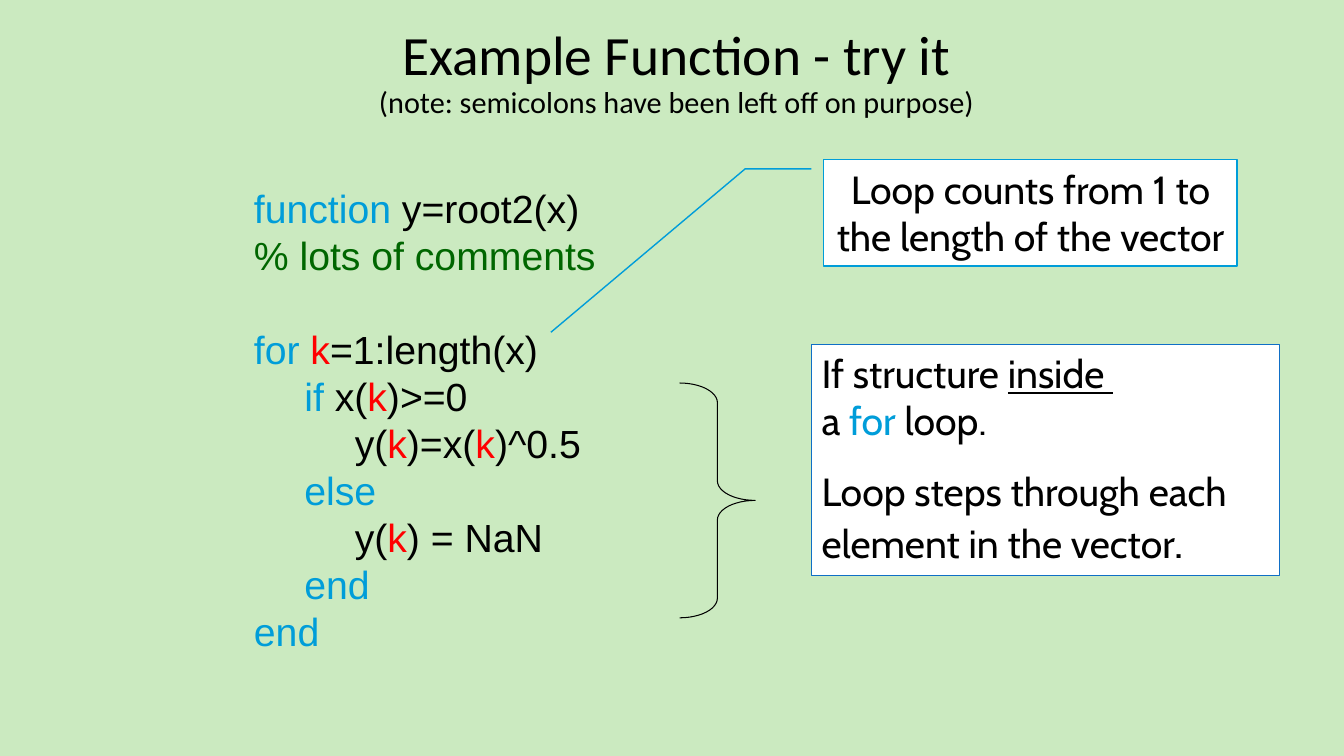
from dataclasses import dataclass

from pptx import Presentation
from pptx.dml.color import RGBColor
from pptx.enum.shapes import MSO_SHAPE
from pptx.enum.text import MSO_ANCHOR, MSO_AUTO_SIZE, PP_ALIGN
from pptx.util import Inches, Pt

RECT = MSO_SHAPE.RECTANGLE
BRACE = MSO_SHAPE.RIGHT_BRACE
CALLOUT = MSO_SHAPE.LINE_CALLOUT_2
TOP, MIDDLE = MSO_ANCHOR.TOP, MSO_ANCHOR.MIDDLE
LEFT, CENTER = PP_ALIGN.LEFT, PP_ALIGN.CENTER
NO_AUTOFIT = MSO_AUTO_SIZE.NONE
TITLE_ONLY = 5


@dataclass(frozen=True)
class Theme:
    background: str = "CBEAC0"
    text: str = "000000"
    keyword: str = "009DD9"
    comment: str = "006600"
    variable: str = "FF0000"
    panel: str = "FFFFFF"
    panel_line: str = "0F6FC6"
    title_font: str = "Calibri"
    code_font: str = "Arial"
    note_font: str = "Cabin"
    title_size: float = 39.6
    subtitle_size: float = 21.6
    body_size: float = 28
    stop_size: float = 32
    code_pitch: float = 33.6
    note_gap: float = 16.5


THEME = Theme()
KEY = {"color": THEME.keyword}
VAR = {"color": THEME.variable}
COMMENT = {"color": THEME.comment}

# Each code line: blank lines above it, then its coloured pieces.
CODE = [
    (0, [("function", KEY), (" y=root2(x)", {})]),
    (0, [("% lots of comments", COMMENT)]),
    (1, [("for ", KEY), ("k", VAR), ("=1:length(x)", {})]),
    (0, [("\tif", KEY), (" x(", {}), ("k", VAR), (")>=0", {})]),
    (0, [("\t\ty(", {}), ("k", VAR), (")=x(", {}), ("k", VAR), (")^0.5", {})]),
    (0, [("\telse", KEY)]),
    (0, [("\t\ty(", {}), ("k", VAR), (") = NaN", {})]),
    (0, [("\tend", KEY)]),
    (0, [("end", KEY)]),
]
STRUCTURE_NOTE = [
    [("If structure ", {}), ("inside ", {"underline": True}), ("\n", {}),
     ("a ", {}), ("for ", KEY), ("loop.", {})],
    [("Loop steps through each element in the vector", {}),
     (".", {"size": THEME.stop_size})],
]
COUNT_NOTE = [[("Loop counts from 1 to the length of the vector", {})]]


def rgb(value):
    return RGBColor.from_string(value)


def add_runs(p, pieces, font):
    """Fill a paragraph with (text, format) pieces; a newline piece is a line break."""
    for text, changes in pieces:
        if text == "\n":
            p.add_line_break()
            continue
        r = p.add_run()
        r.text = text
        style = {"name": font, "size": THEME.body_size, "color": THEME.text} | changes
        r.font.color.rgb = rgb(style.pop("color"))
        style["size"] = Pt(style["size"])
        for name, value in style.items():
            setattr(r.font, name, value)


def next_paragraph(tf, index):
    return tf.add_paragraph() if index else tf.paragraphs[0]


def place(sp, box):
    for name, value in zip(("left", "top", "width", "height"), box):
        setattr(sp, name, Inches(value))


def add_outline(slide, kind, box, line, width, adjustments=()):
    sp = slide.shapes.add_shape(kind, *map(Inches, box))
    sp.shadow.inherit = False
    sp.line.color.rgb = rgb(line)
    sp.line.width = Pt(width)
    for i, value in enumerate(adjustments):
        sp.adjustments[i] = value
    return sp


def add_title(slide, box):
    sp = slide.shapes.title
    place(sp, box)
    tf = sp.text_frame
    tf.word_wrap, tf.auto_size, tf.vertical_anchor = True, NO_AUTOFIT, MIDDLE
    p = tf.paragraphs[0]
    p.alignment, p.line_spacing = CENTER, 0.9
    add_runs(p, [
        ("Example Function - try it", {"size": THEME.title_size}),
        ("\n", {}),
        ("(note: semicolons have been left off on purpose)",
         {"size": THEME.subtitle_size}),
    ], THEME.title_font)


def add_code(slide, box):
    """Code listing with a brace around the if structure."""
    left, top, width, height = box
    tf = slide.shapes.add_textbox(*map(Inches, box)).text_frame
    tf.word_wrap = True
    for i, (blanks, pieces) in enumerate(CODE):
        p = next_paragraph(tf, i)
        p.line_spacing = Pt(THEME.code_pitch)
        if blanks:
            p.space_before = Pt(blanks * THEME.code_pitch)
        add_runs(p, pieces, THEME.code_font)
    brace = add_outline(slide, BRACE, (left + 4.32, top + 2.02, 0.75, 2.33),
                        THEME.text, 0.75, (0.26, 0.5))
    brace.fill.background()


def add_note(sp, paragraphs, alignment, anchor):
    """White panel holding a remark on the code."""
    sp.fill.solid()
    sp.fill.fore_color.rgb = rgb(THEME.panel)
    tf = sp.text_frame
    tf.word_wrap, tf.vertical_anchor = True, anchor
    for i, pieces in enumerate(paragraphs):
        p = next_paragraph(tf, i)
        p.alignment = alignment
        if i:
            p.space_before = Pt(THEME.note_gap)
        add_runs(p, pieces, THEME.note_font)


def add_structure_note(slide, box):
    sp = add_outline(slide, RECT, box, THEME.panel_line, 1)
    add_note(sp, STRUCTURE_NOTE, LEFT, TOP)


def add_count_callout(slide, box):
    """Callout whose bent leader reaches the for line."""
    sp = add_outline(slide, CALLOUT, box, THEME.keyword, 1,
                     (0.09, -0.03, 0.09, -0.19, 1.62, -0.66))
    add_note(sp, COUNT_NOTE, CENTER, MIDDLE)


def main():
    prs = Presentation()
    prs.slide_width, prs.slide_height = Inches(13.33), Inches(7.5)
    slide = prs.slides.add_slide(prs.slide_layouts[TITLE_ONLY])
    slide.background.fill.solid()
    slide.background.fill.fore_color.rgb = rgb(THEME.background)
    add_title(slide, (2.17, 0.17, 9.08, 1.12))
    add_code(slide, (2.42, 1.78, 6.25, 4.77))
    add_structure_note(slide, (8.05, 3.42, 4.64, 2.29))
    add_count_callout(slide, (8.17, 1.58, 4.1, 1.06))
    prs.save("out.pptx")


if __name__ == "__main__":
    main()
